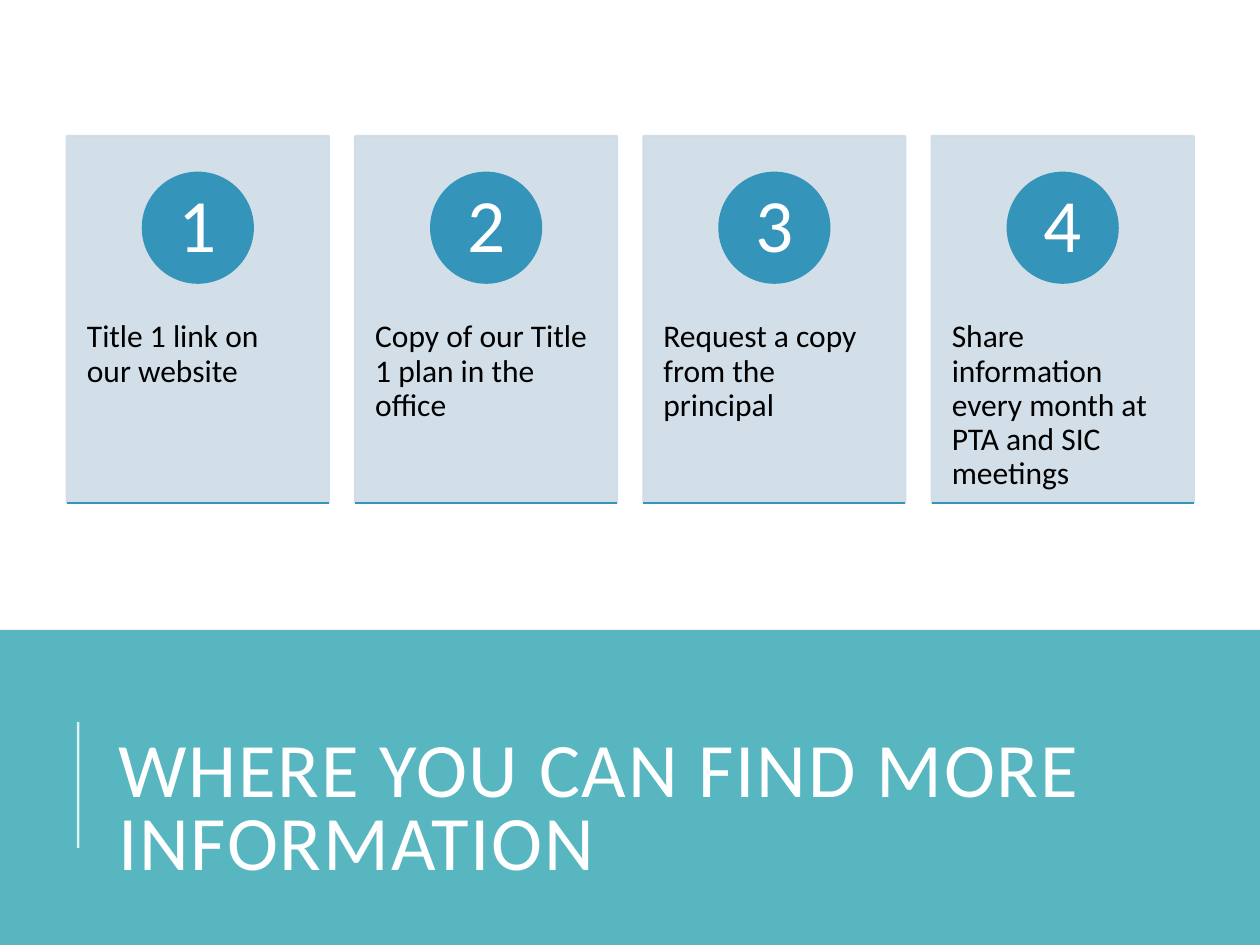
from lxml.etree import SubElement
from pptx import Presentation
from pptx.dml.color import RGBColor
from pptx.enum.shapes import MSO_CONNECTOR as Connector, MSO_SHAPE as Preset
from pptx.enum.text import MSO_ANCHOR as Anchor, MSO_AUTO_SIZE as AutoSize, PP_ALIGN as Align
from pptx.oxml.ns import qn
from pptx.util import Inches, Pt

TITLE = "WHERE YOU CAN FIND MORE INFORMATION"
STEPS = [
    "Title 1 link on our website",
    "Copy of our Title 1 plan in the office",
    "Request a copy from the principal",
    "Share information every month at PTA and SIC meetings",
]
COLORS = {
    "band": "58B6C0",
    "card": "CEDCE7",
    "accent": "3494BA",
    "light": "FFFFFF",
    "dark": "000000",
}
FONT = "Calibri"
WIDTH, HEIGHT = 10, 7.5
BAND_TOP = HEIGHT * 2 / 3
CARD_LEFT, CARD_TOP, CARD_WIDTH, CARD_HEIGHT = 0.53, 1.08, 2.08, 2.91
CARD_PITCH = CARD_WIDTH * 1.1
CIRCLE_SIZE = CARD_HEIGHT * 0.3
CIRCLE_TOP = CARD_TOP + CARD_HEIGHT * 0.1
TEXT_TOP = CARD_TOP + CARD_HEIGHT * 0.38
TEXT_HEIGHT = CARD_HEIGHT * 0.6


def color(name):
    return RGBColor.from_string(COLORS[name])


def set_alpha(paint, percent):
    for tint in paint.iter(qn("a:srgbClr")):
        SubElement(tint, qn("a:alpha"), val=str(percent * 1000))


def write(shape, text, size, ink, align=Align.LEFT, anchor=Anchor.TOP,
          insets=(0.1, 0.05), leading=0.9, after=0, tracking=0):
    frame = shape.text_frame
    frame.word_wrap = True
    frame.auto_size = AutoSize.NONE
    frame.vertical_anchor = anchor
    frame.margin_left = frame.margin_right = Inches(insets[0])
    frame.margin_top = frame.margin_bottom = Inches(insets[1])
    para = frame.paragraphs[0]
    para.alignment = align
    para.line_spacing = leading
    para.space_after = Pt(after)
    span = para.add_run()
    span.text = text
    span.font.name = FONT
    span.font.size = Pt(size)
    span.font.color.rgb = color(ink)
    if tracking:
        span.font._element.set("spc", str(tracking * 100))


def add_block(page, preset, box, fill, outlined=True):
    shape = page.shapes.add_shape(preset, *map(Inches, box))
    shape.shadow.inherit = False
    shape.fill.solid()
    shape.fill.fore_color.rgb = color(fill)
    if outlined:
        shape.line.color.rgb = color(fill)
        shape.line.width = Pt(1.25)
    else:
        shape.line.fill.background()
    return shape


def add_rule(page, start, end, ink, width):
    rule = page.shapes.add_connector(Connector.STRAIGHT, *map(Inches, start + end))
    rule.line.color.rgb = color(ink)
    rule.line.width = Pt(width)
    SubElement(rule._element.spPr, qn("a:effectLst"))
    return rule


def add_card(page, index, text):
    left = CARD_LEFT + index * CARD_PITCH
    bottom = CARD_TOP + CARD_HEIGHT
    card = add_block(page, Preset.RECTANGLE, (left, CARD_TOP, CARD_WIDTH, CARD_HEIGHT), "card")
    set_alpha(card._element.spPr, 90)

    box = page.shapes.add_textbox(*map(Inches, (left, TEXT_TOP, CARD_WIDTH, TEXT_HEIGHT)))
    write(box, text, 18, "dark", insets=(0.16, 0.36))

    circle_left = left + (CARD_WIDTH - CIRCLE_SIZE) / 2
    circle = add_block(page, Preset.OVAL,
                       (circle_left, CIRCLE_TOP, CIRCLE_SIZE, CIRCLE_SIZE), "accent")
    write(circle, str(index + 1), 43, "light", align=Align.CENTER,
          anchor=Anchor.MIDDLE, insets=(0.07, 0.01))

    add_rule(page, (left, bottom), (left + CARD_WIDTH, bottom), "accent", 1.25)


def main():
    deck = Presentation()
    deck.slide_width, deck.slide_height = Inches(WIDTH), Inches(HEIGHT)
    page = deck.slides.add_slide(deck.slide_layouts[5])

    band = add_block(page, Preset.RECTANGLE,
                     (0, BAND_TOP, WIDTH, HEIGHT - BAND_TOP), "band", outlined=False)
    page.shapes._spTree.insert(2, band._element)

    title = page.shapes.title
    title.left, title.top, title.width, title.height = map(Inches, (0.84, 5.44, 7.97, 1.64))
    write(title, TITLE, 44, "light", anchor=Anchor.BOTTOM, leading=0.8, tracking=1)

    marker = add_rule(page, (0.62, 6.73), (0.62, 5.73), "light", 1.5)
    set_alpha(marker._element.spPr, 80)

    for index, text in enumerate(STEPS):
        add_card(page, index, text)
    deck.save("out.pptx")


if __name__ == "__main__":
    main()
